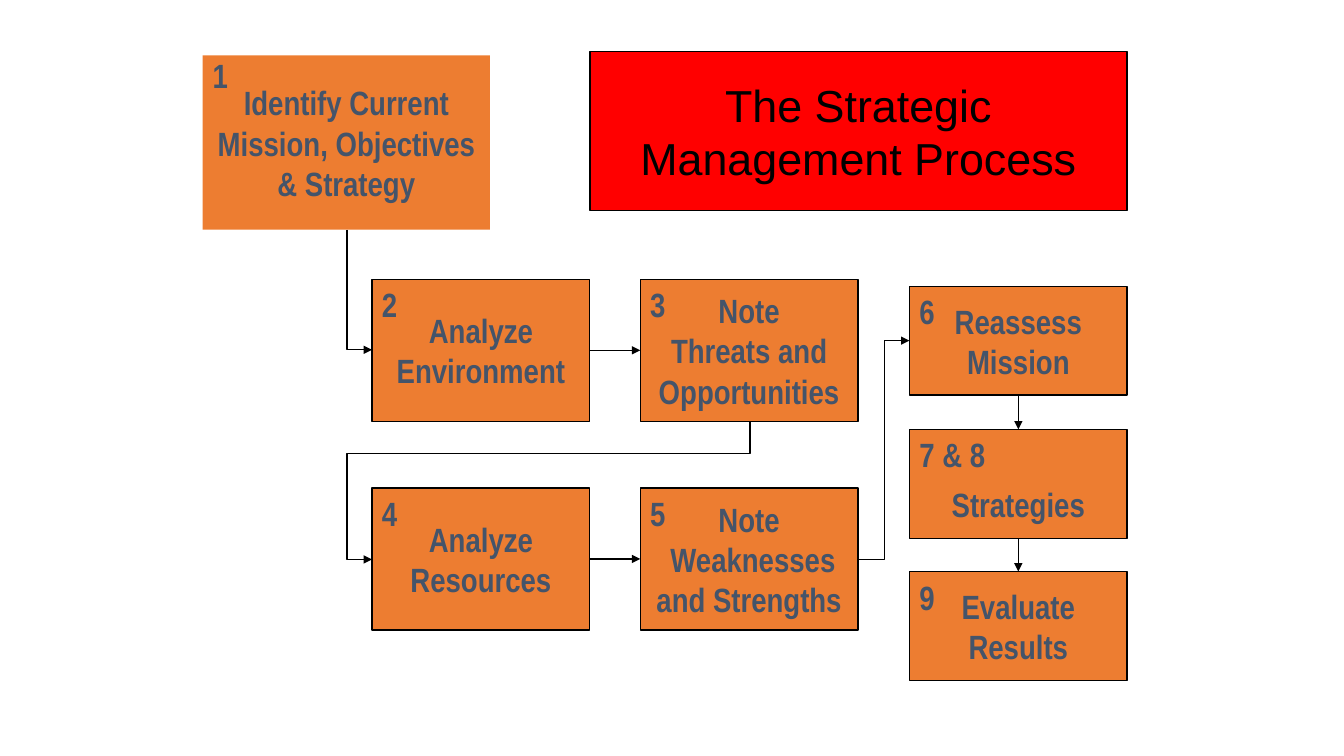
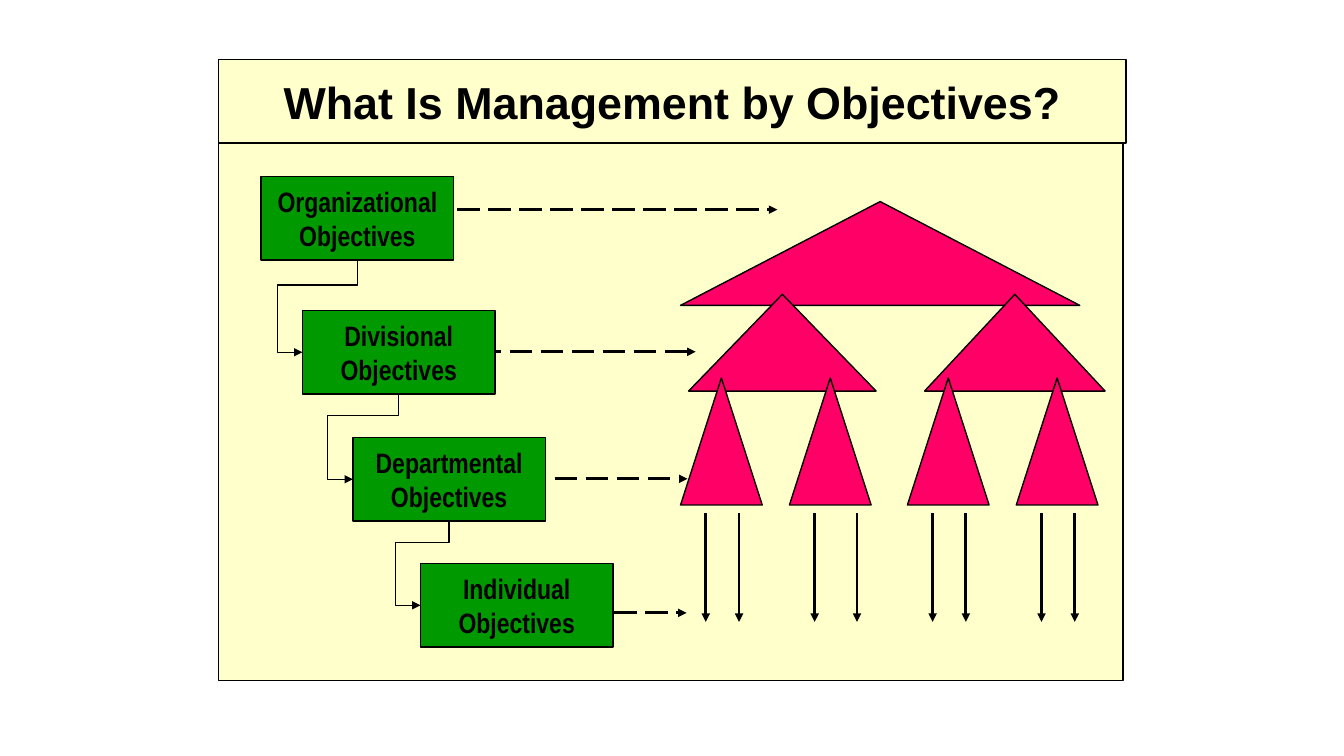
import lxml.etree
import pptx
import pptx.dml.color
import pptx.enum.dml
import pptx.enum.shapes
import pptx.enum.text
import pptx.oxml.ns
import pptx.util

Inches = pptx.util.Inches
RGBColor = pptx.dml.color.RGBColor
SHAPE = pptx.enum.shapes.MSO_SHAPE
ALIGN = pptx.enum.text.PP_ALIGN
ANCHOR = pptx.enum.text.MSO_ANCHOR
LONG_DASH = pptx.enum.dml.MSO_LINE.LONG_DASH
qn = pptx.oxml.ns.qn

BLACK = RGBColor(0x00, 0x00, 0x00)
SLATE = RGBColor(0x44, 0x54, 0x6A)
ORANGE = RGBColor(0xED, 0x7D, 0x31)
RED = RGBColor(0xFF, 0x00, 0x00)
CREAM = RGBColor(0xFF, 0xFF, 0xCC)
PINK = RGBColor(0xFF, 0x00, 0x66)
GREEN = RGBColor(0x00, 0x99, 0x00)


def style(sp, fill, text="", size=24, color=BLACK, font="Arial Narrow", bold=True,
          align=ALIGN.CENTER, anchor=ANCHOR.MIDDLE):
    sp.shadow.inherit = False
    if fill is None:
        sp.fill.background()
    else:
        sp.fill.solid()
        sp.fill.fore_color.rgb = fill
        sp.line.color.rgb = BLACK
        sp.line.width = pptx.util.Pt(1)
    if not text:
        return
    tf = sp.text_frame
    tf.text = text
    tf.word_wrap = False
    tf.auto_size = pptx.enum.text.MSO_AUTO_SIZE.NONE
    tf.vertical_anchor = anchor
    for p in tf.paragraphs:
        p.alignment = align
        for r in p.runs:
            r.font.name = font
            r.font.size = pptx.util.Pt(size)
            r.font.bold = bold
            r.font.color.rgb = color


def arrow(s, points, width=1, dash=None):
    pts = [(Inches(x), Inches(y)) for x, y in points]
    if len(pts) == 2:
        line = s.shapes.add_connector(pptx.enum.shapes.MSO_CONNECTOR.STRAIGHT, *pts[0], *pts[1])
    else:
        builder = s.shapes.build_freeform(*pts[0])
        builder.add_line_segments(pts[1:], close=False)
        line = builder.convert_to_shape()
        line.fill.background()
    line.line.color.rgb = BLACK
    line.line.width = pptx.util.Pt(width)
    if dash:
        line.line.dash_style = dash
    props = line.element.spPr
    lxml.etree.SubElement(props.find(qn("a:ln")), qn("a:tailEnd"), type="triangle")
    lxml.etree.SubElement(props, qn("a:effectLst"))
    return line


prs = pptx.Presentation()
prs.slide_width = Inches(13.33)
prs.slide_height = Inches(7.5)

titles = [
    ("The Strategic\nManagement Process", (5.85, 0.51, 5.33, 1.58), "roundRect", RED, False),
    ("What Is Management by Objectives?", (2.17, 0.59, 9, 0.83), "rect", CREAM, True),
]
for text, place, preset, fill, bold in titles:
    s = prs.slides.add_slide(prs.slide_layouts[5])
    title = s.shapes.title
    title.left, title.top, title.width, title.height = [Inches(v) for v in place]
    geom = lxml.etree.SubElement(title.element.spPr, qn("a:prstGeom"), prst=preset)
    lxml.etree.SubElement(geom, qn("a:avLst"))
    style(title, fill, text, 32, font="Arial", bold=bold)

process, objectives = prs.slides

COLS = [3.69, 6.35, 9.02]
BOX_W, BOX_H, STEP_H = 2.16, 1.41, 1.08
steps = [
    ("1", "Identify Current\nMission, Objectives\n& Strategy", 2.01, 0.55, 2.85, 1.73),
    ("2", "Analyze\nEnvironment", COLS[0], 2.77, BOX_W, BOX_H),
    ("3", "Note\nThreats and\nOpportunities", COLS[1], 2.77, BOX_W, BOX_H),
    ("4", "Analyze\nResources", COLS[0], 4.84, BOX_W, BOX_H),
    ("5", "Note\n Weaknesses\nand Strengths", COLS[1], 4.84, BOX_W, BOX_H),
    ("6", "Reassess\nMission", COLS[2], 2.84, BOX_W, STEP_H),
    ("7 & 8", "Strategies", COLS[2], 4.26, BOX_W, STEP_H),
    ("9", "Evaluate\nResults", COLS[2], 5.67, BOX_W, STEP_H),
]
boxes = {}
for number, text, x, y, w, h in steps:
    sp = process.shapes.add_shape(SHAPE.RECTANGLE, Inches(x), Inches(y), Inches(w), Inches(h))
    style(sp, ORANGE, text, color=SLATE)
    boxes[number] = sp
    label_y = 0.5 if number == "1" else y
    label_w = 0.86 if len(number) > 1 else 0.35
    label = process.shapes.add_textbox(Inches(x), Inches(label_y), Inches(label_w), Inches(0.5))
    style(label, None, number, color=SLATE, align=ALIGN.LEFT, anchor=ANCHOR.TOP)
boxes["1"].line.fill.background()
boxes["7 & 8"].text_frame.margin_top = Inches(0.45)

for start, end, start_side, end_side in [
    ("2", "3", 3, 1), ("4", "5", 3, 1), ("6", "7 & 8", 2, 0), ("7 & 8", "9", 2, 0),
]:
    line = arrow(process, [(0, 0), (1, 1)])
    line.begin_connect(boxes[start], start_side)
    line.end_connect(boxes[end], end_side)

for points in [
    [(3.44, 2.28), (3.44, 3.47), (3.69, 3.47)],
    [(7.44, 4.18), (7.44, 4.5), (3.44, 4.5), (3.44, 5.55), (3.69, 5.55)],
    [(8.52, 5.55), (8.77, 5.55), (8.77, 3.38), (9.02, 3.38)],
]:
    arrow(process, points)

frame = objectives.shapes.add_shape(
    SHAPE.RECTANGLE, Inches(2.17), Inches(1.42), Inches(8.97), Inches(5.33))
style(frame, CREAM)

units = [(6.75, 0.25, 0.58), (7.83, 0.25, 0.67), (9, 0.25, 0.58), (10.08, 0.25, 0.58)]
triangles = [(6.75, 2, 3.96, 1.03), (6.83, 2.92, 1.86, 0.96), (9.17, 2.92, 1.79, 0.96)]
triangles += [(x, 3.75, 0.81, 1.26) for x, *offsets in units]
for place in triangles:
    sp = objectives.shapes.add_shape(SHAPE.ISOSCELES_TRIANGLE, *[Inches(v) for v in place])
    style(sp, PINK)
for x, *offsets in units:
    for dx in offsets:
        arrow(objectives, [(x + dx, 5.09), (x + dx, 6.17)], 2)

for x1, x2, y in [(3.92, 7.71, 2.08), (4.75, 6.9, 3.49), (5.5, 6.82, 4.75), (6.09, 6.81, 6.08)]:
    arrow(objectives, [(x1, y), (x2, y)], 2, LONG_DASH)

LEVEL_W, LEVEL_H = 1.91, 0.83
levels = [
    ("Organizational", 2.59, 1.75),
    ("Divisional", 3, 3.08),
    ("Departmental", 3.5, 4.34),
    ("Individual", 4.17, 5.59),
]
for name, x, y in levels:
    sp = objectives.shapes.add_shape(
        SHAPE.RECTANGLE, Inches(x), Inches(y), Inches(LEVEL_W), Inches(LEVEL_H))
    style(sp, GREEN, name + "\nObjectives", 20)

for (_, x1, y1), (_, x2, y2) in zip(levels, levels[1:]):
    center, bottom = x1 + LEVEL_W / 2, y1 + LEVEL_H
    turn, side, middle = (bottom + y2) / 2, x2 - 0.25, y2 + LEVEL_H / 2
    arrow(objectives, [(center, bottom), (center, turn), (side, turn), (side, middle), (x2, middle)])

prs.save("out.pptx")
